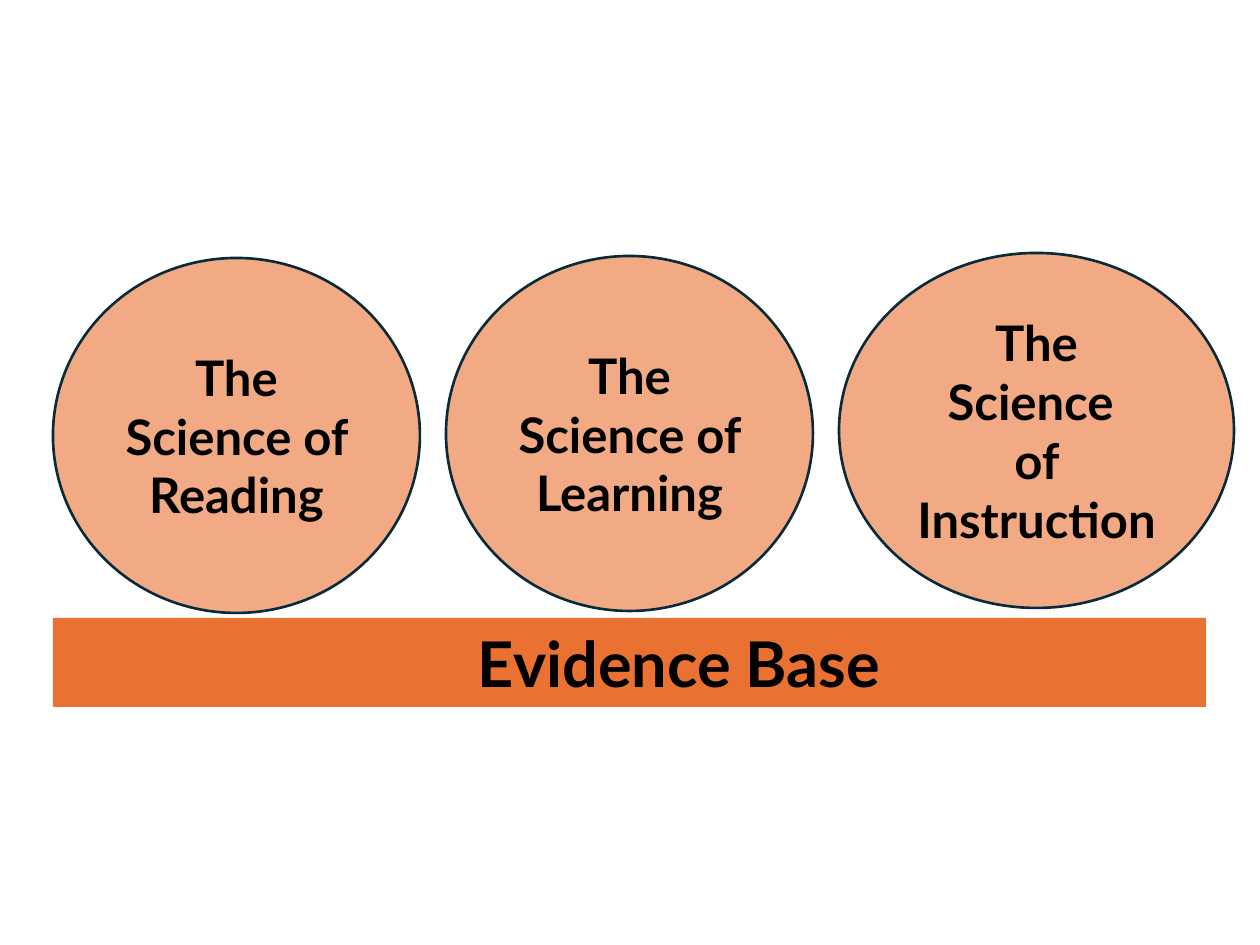
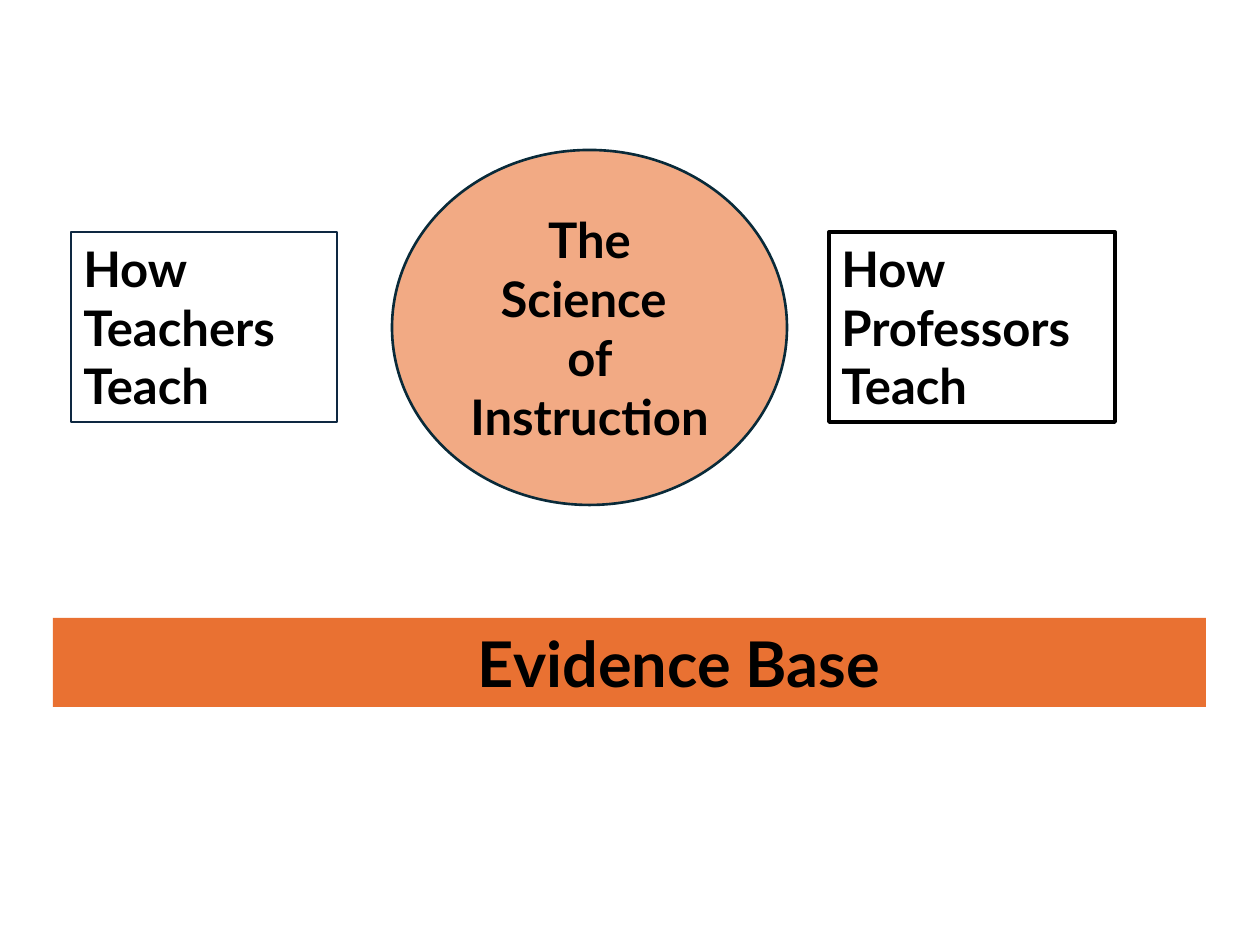
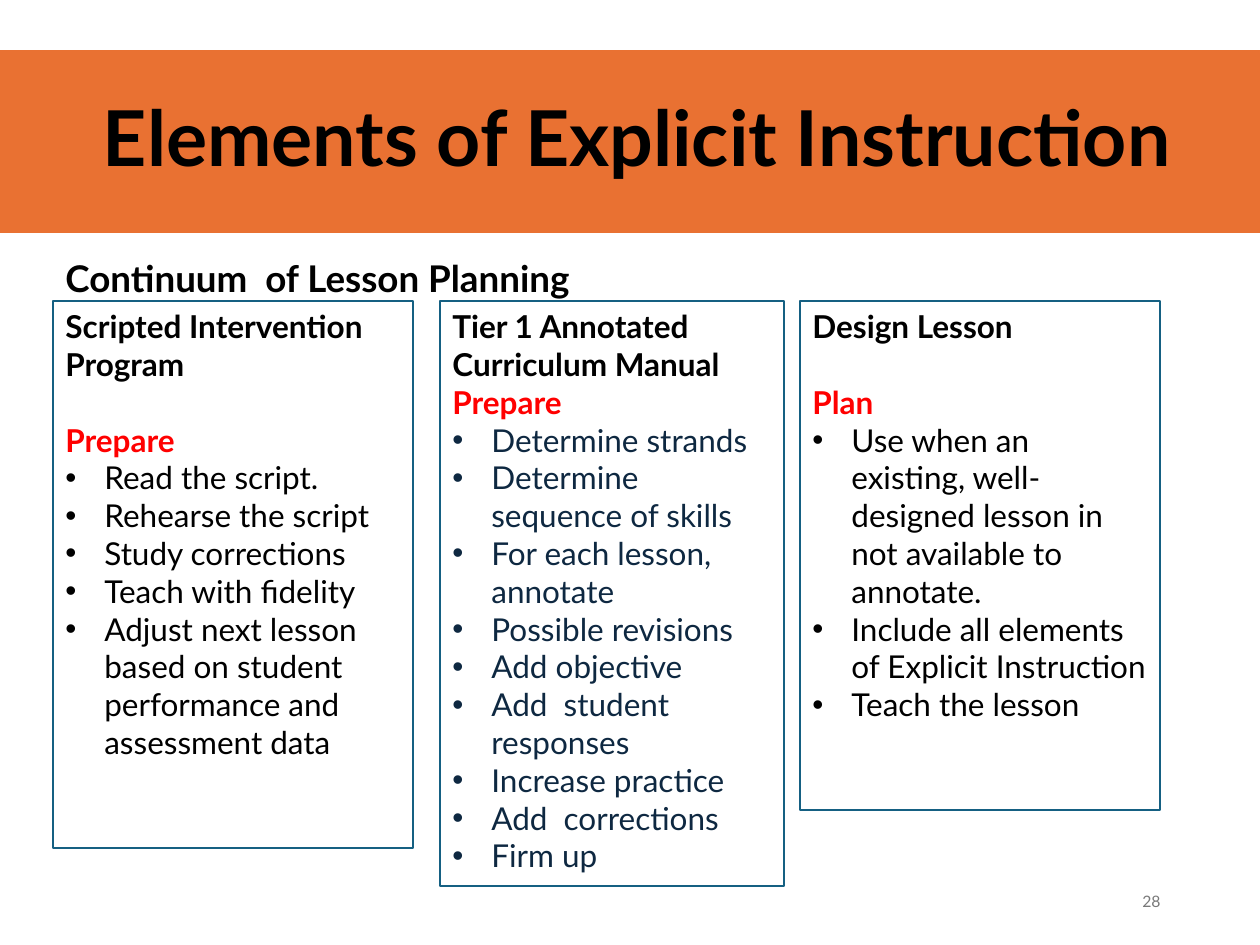
from lxml import etree
from pptx import Presentation
from pptx import util as u
from pptx.dml.color import RGBColor
from pptx.enum import shapes, text
from pptx.oxml import ns

PX = 7257.14  # EMU per px, 126 px to the inch
FONT = "Lato"
BLACK = RGBColor(0x00, 0x00, 0x00)
ORANGE = RGBColor(0xE9, 0x71, 0x32)
PEACH = RGBColor(0xF2, 0xAA, 0x84)
CIRCLE_LINE = RGBColor(0x09, 0x2A, 0x39)
NAVY = RGBColor(0x0E, 0x28, 0x41)
TEAL = RGBColor(0x15, 0x60, 0x82)
RED = RGBColor(0xFF, 0x00, 0x00)
GREY = RGBColor(0x79, 0x79, 0x79)

OVAL, RECT = shapes.MSO_SHAPE.OVAL, shapes.MSO_SHAPE.RECTANGLE
LEFT, CENTER, RIGHT = text.PP_ALIGN.LEFT, text.PP_ALIGN.CENTER, text.PP_ALIGN.RIGHT
TOP, MIDDLE = text.MSO_ANCHOR.TOP, text.MSO_ANCHOR.MIDDLE
INSTRUCTION = "The Science \nof Instruction"


def add_box(page, kind, place, fill=None, line=None, width=1.5):
    """Add a preset shape at (left, top, width, height) in px."""
    box = page.shapes.add_shape(kind, *[round(n * PX) for n in place])
    box.shadow.inherit = False
    if fill is None:
        box.fill.background()
    else:
        box.fill.solid()
        box.fill.fore_color.rgb = fill
    if line is None:
        box.line.fill.background()
    else:
        box.line.color.rgb = line
        box.line.width = u.Pt(width)
    return box


def write(box, words, size, align=LEFT, anchor=TOP, bold=True, color=BLACK):
    """Fill a box with one paragraph per line and return the paragraphs."""
    frame = box.text_frame
    frame.text = words
    frame.word_wrap = True
    frame.vertical_anchor = anchor
    for para in frame.paragraphs:
        para.alignment = align
        for span in para.runs:
            span.font.name = FONT
            span.font.size = u.Pt(size)
            span.font.bold = bold
            span.font.color.rgb = color
    return frame.paragraphs


deck = Presentation()
deck.slide_width, deck.slide_height = u.Inches(10), u.Inches(7.5)
sciences, teaching, planning = [deck.slides.add_slide(deck.slide_layouts[6]) for _ in range(3)]

# Science circles
circles = [
    (sciences, (53, 258, 367, 355), "The Science of Reading"),
    (sciences, (446, 256, 367, 355), "The Science of Learning"),
    (sciences, (839, 253, 395, 355), INSTRUCTION),
    (teaching, (392, 150, 395, 355), INSTRUCTION),
]
for page, place, words in circles:
    circle = add_box(page, OVAL, place, PEACH, CIRCLE_LINE)
    write(circle, words, 28, CENTER, MIDDLE)

# Evidence bands
for page in (sciences, teaching):
    band = add_box(page, RECT, (53, 618, 1153, 89), ORANGE)
    write(band, "Evidence Base", 36)
    band.text_frame.margin_left = round(425 * PX)

# Who teaches
teachers = add_box(teaching, RECT, (71, 232, 266, 190), line=NAVY)
write(teachers, "How Teachers\nTeach", 28)
professors = add_box(teaching, RECT, (829, 232, 286, 190), line=BLACK, width=2.25)
write(professors, "How\nProfessors\nTeach", 28)

# Title band, subtitle and slide number
title = add_box(planning, RECT, (0, 50, 1260, 183), ORANGE)
write(title, "Elements of Explicit Instruction", 44, anchor=MIDDLE)[0].line_spacing = 0.9
title.text_frame.margin_left = round(103 * PX)

subtitle = add_box(planning, RECT, (53, 255, 1150, 46))
write(subtitle, "Continuum  of Lesson Planning", 21)[0].line_spacing = 0.9

number = add_box(planning, RECT, (890, 876, 283, 50))
write(number, "28", 9, RIGHT, MIDDLE, False, GREY)

# Planning columns: place, heading, gap before the step (pt), step, bullet colour, bullets
columns = [
    ((53, 301, 360, 547), "Scripted Intervention Program", 21.6, "Prepare", BLACK, [
        "Read the script.", "Rehearse the script", "Study corrections", "Teach with fidelity",
        "Adjust next lesson based on student performance and assessment data"]),
    ((440, 301, 344, 585), "Tier 1 Annotated\nCurriculum Manual", 0, "Prepare", NAVY, [
        "Determine strands", "Determine sequence of skills", "For each lesson, annotate",
        "Possible revisions", "Add objective", "Add  student responses",
        "Increase practice", "Add  corrections", "Firm up"]),
    ((800, 301, 360, 509), "Design Lesson", 21.6, "Plan", BLACK, [
        "Use when an existing, well-designed lesson in not available to annotate.",
        "Include all elements of Explicit Instruction", "Teach the lesson"]),
]
indent = round(39 * PX)
for place, heading, gap, step, color, bullets in columns:
    column = add_box(planning, RECT, place, line=TEAL, width=0.75)
    paras = write(column, "\n".join([heading, step, *bullets]), 18)
    step_para = paras[-len(bullets) - 1]
    step_para.space_before = u.Pt(gap)
    step_para.runs[0].font.color.rgb = RED
    for para in paras[-len(bullets):]:
        para.runs[0].font.bold = False
        para.runs[0].font.color.rgb = color
        props = para._p.get_or_add_pPr()
        props.set("marL", str(indent))
        props.set("indent", str(-indent))
        etree.SubElement(props, ns.qn("a:buFont")).set("typeface", "Arial")
        etree.SubElement(props, ns.qn("a:buChar")).set("char", "•")

deck.save("out.pptx")
